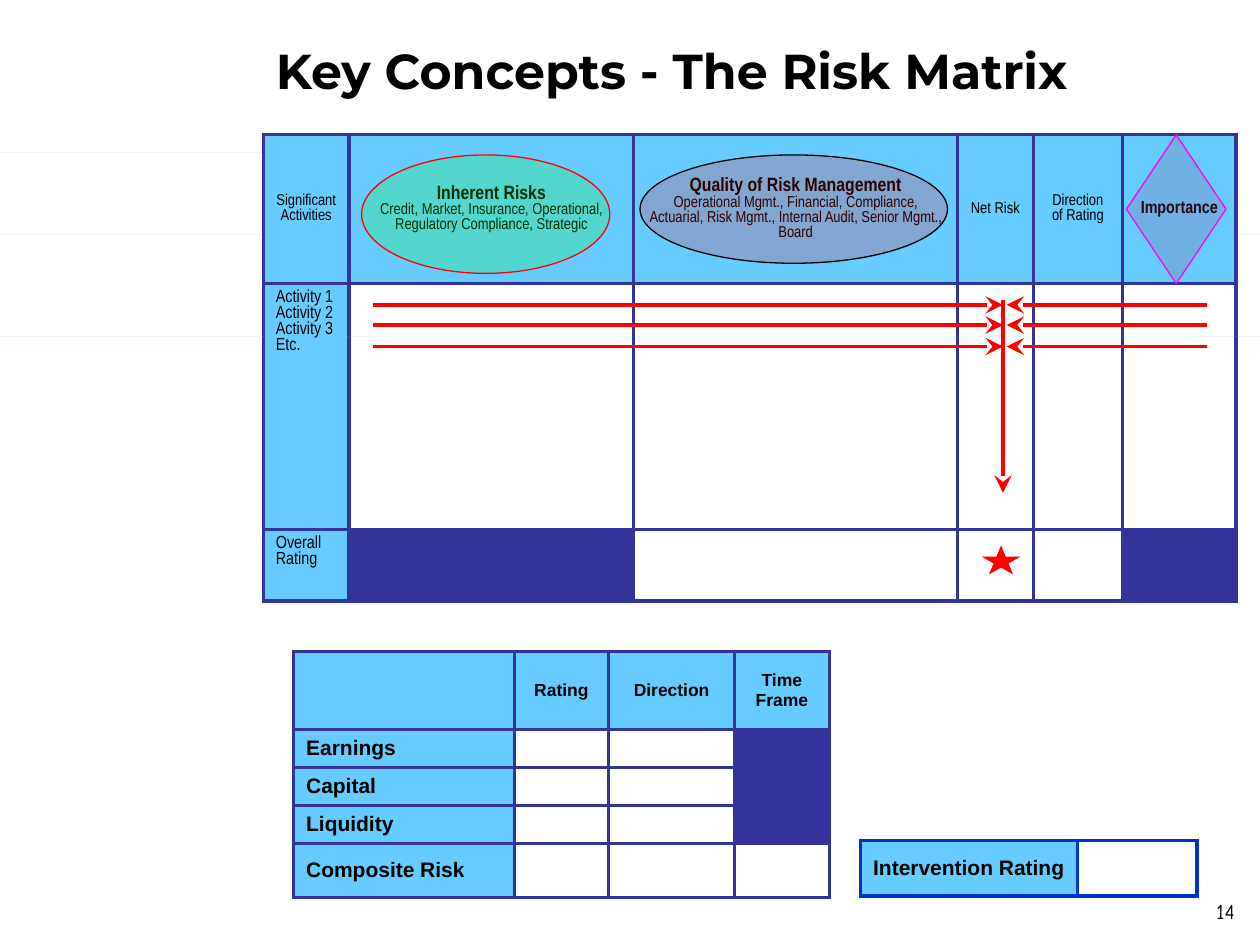
from dataclasses import dataclass

from lxml import etree
from pptx import Presentation
from pptx.dml.color import RGBColor
from pptx.enum.shapes import MSO_CONNECTOR, MSO_SHAPE
from pptx.enum.text import MSO_ANCHOR, PP_ALIGN
from pptx.oxml.ns import qn
from pptx.util import Inches, Pt

LEFT, CENTER, RIGHT = PP_ALIGN.LEFT, PP_ALIGN.CENTER, PP_ALIGN.RIGHT
TOP, MIDDLE, BOTTOM = MSO_ANCHOR.TOP, MSO_ANCHOR.MIDDLE, MSO_ANCHOR.BOTTOM
RECT, OVAL = MSO_SHAPE.RECTANGLE, MSO_SHAPE.OVAL
DIAMOND, STAR = MSO_SHAPE.DIAMOND, MSO_SHAPE.STAR_5_POINT
STRAIGHT = MSO_CONNECTOR.STRAIGHT


@dataclass(frozen=True)
class Theme:
    sky: str = "66CCFF"
    navy: str = "333399"
    blue: str = "0033CC"
    red: str = "FF0000"
    green: str = "00FF00"
    plum: str = "993366"
    pink: str = "FF00FF"
    black: str = "000000"
    head: str = "Montserrat"
    sans: str = "Arial"
    slim: str = "Arial Narrow"
    page: str = "Comic Neue"
    title: float = 28
    large: float = 12
    lead: float = 11
    mid: float = 10
    small: float = 9


T = Theme()


@dataclass(frozen=True)
class Line:
    text: str
    size: float
    bold: bool = False


@dataclass(frozen=True)
class Cell:
    lines: tuple[Line, ...] = ()
    fill: str = ""
    align: PP_ALIGN = LEFT
    anchor: MSO_ANCHOR = MIDDLE


@dataclass(frozen=True)
class Grid:
    left: float
    top: float
    cols: tuple[float, ...]
    rows: tuple[float, ...]
    cells: list[list[Cell]]
    edge: str
    width: float
    font: str


@dataclass(frozen=True)
class Mark:
    kind: MSO_SHAPE
    box: tuple[float, float, float, float]
    fill: str
    alpha: int = 100
    line: str = ""


def add_run(para, line: Line, font: str) -> None:
    run = para.add_run()
    run.text = line.text
    run.font.name = font
    run.font.size = Pt(line.size)
    run.font.bold = line.bold
    run.font.color.rgb = RGBColor.from_string(T.black)


def add_edges(cell, color: str, width: float) -> None:
    """Border all four sides; borders must precede the cell's fill."""
    props = cell._tc.get_or_add_tcPr()
    for i, tag in enumerate(("a:lnL", "a:lnR", "a:lnT", "a:lnB")):
        edge = etree.Element(qn(tag), w=str(Pt(width)))
        fill = etree.SubElement(edge, qn("a:solidFill"))
        etree.SubElement(fill, qn("a:srgbClr"), val=color)
        props.insert(i, edge)


def fill_cell(cell, item: Cell, grid: Grid) -> None:
    if item.fill:
        cell.fill.solid()
        cell.fill.fore_color.rgb = RGBColor.from_string(item.fill)
    else:
        cell.fill.background()
    add_edges(cell, grid.edge, grid.width)
    cell.vertical_anchor = item.anchor
    frame = cell.text_frame
    if not item.lines:
        end = etree.SubElement(frame.paragraphs[0]._p, qn("a:endParaRPr"))
        end.set("sz", str(int(T.small * 100)))
    for i, line in enumerate(item.lines):
        para = frame.add_paragraph() if i else frame.paragraphs[0]
        para.alignment = item.align
        add_run(para, line, grid.font)


def add_grid(slide, grid: Grid) -> None:
    table = slide.shapes.add_table(
        len(grid.rows), len(grid.cols), Inches(grid.left), Inches(grid.top),
        Inches(sum(grid.cols)), Inches(sum(grid.rows))).table
    table.first_row = table.horz_banding = False
    for col, width in zip(table.columns, grid.cols):
        col.width = Inches(width)
    for row, height, items in zip(table.rows, grid.rows, grid.cells):
        row.height = Inches(height)
        for cell, item in zip(row.cells, items):
            fill_cell(cell, item, grid)


def add_mark(slide, mark: Mark) -> None:
    shape = slide.shapes.add_shape(mark.kind, *map(Inches, mark.box))
    shape.shadow.inherit = False
    shape.fill.solid()
    shape.fill.fore_color.rgb = RGBColor.from_string(mark.fill)
    if mark.alpha < 100:
        color = shape._element.spPr.find(qn("a:solidFill"))[0]
        etree.SubElement(color, qn("a:alpha"), val=str(mark.alpha * 1000))
    if mark.line:
        shape.line.color.rgb = RGBColor.from_string(mark.line)
        shape.line.width = Pt(0.75)
    else:
        shape.line.fill.background()


def add_arrow(slide, x1: float, y1: float, x2: float, y2: float) -> None:
    arrow = slide.shapes.add_connector(
        STRAIGHT, Inches(x1), Inches(y1), Inches(x2), Inches(y2))
    arrow.line.color.rgb = RGBColor.from_string(T.red)
    arrow.line.width = Pt(2)
    props = arrow._element.spPr
    etree.SubElement(props.find(qn("a:ln")), qn("a:tailEnd"),
                     type="stealth", w="lg", len="lg")
    etree.SubElement(props, qn("a:effectLst"))


def add_title(slide) -> None:
    title = slide.shapes.title
    title.left, title.top = Inches(2.09), Inches(0.27)
    title.width, title.height = Inches(7.48), Inches(1.04)
    frame = title.text_frame
    frame.vertical_anchor = TOP
    frame.paragraphs[0].alignment = LEFT
    add_run(frame.paragraphs[0],
            Line("Key Concepts - The Risk Matrix", T.title, True), T.head)


def add_page(slide) -> None:
    box = slide.shapes.add_textbox(*map(Inches, (9.5, 7.03, 0.3, 0.3)))
    frame = box.text_frame
    frame.word_wrap = True
    frame.margin_left = frame.margin_right = 0
    frame.margin_top = frame.margin_bottom = 0
    frame.vertical_anchor = BOTTOM
    frame.paragraphs[0].alignment = RIGHT
    add_run(frame.paragraphs[0], Line("14", T.large), T.page)


def head(*lines: Line) -> Cell:
    return Cell(lines, T.sky, CENTER)


def label(text: str) -> Cell:
    return Cell((Line(text, T.large, True),), T.sky)


def side(*texts: str) -> Cell:
    return Cell(tuple(Line(t, T.mid) for t in texts), T.sky, anchor=TOP)


BLANK, DARK = Cell(), Cell(fill=T.navy)

MATRIX = Grid(2.09, 1.07, (0.68, 2.26, 2.57, 0.6, 0.71, 0.9), (1.18, 1.95, 0.57), [
    [head(Line("Significant Activities", T.small)),
     head(Line("Inherent Risks", T.lead, True),
          Line("Credit, Market, Insurance, Operational, "
               "Regulatory Compliance, Strategic", T.small)),
     head(Line("Quality of Risk Management", T.lead, True),
          Line("Operational Mgmt., Financial, Compliance, Actuarial, "
               "Risk Mgmt., Internal Audit, Senior Mgmt., Board", T.small)),
     head(Line("Net Risk", T.small)),
     head(Line("Direction of Rating", T.small)),
     head(Line("Importance", T.mid, True))],
    [side("Activity 1", "Activity 2", "Activity 3", "Etc."), *[BLANK] * 5],
    [side("Overall Rating"), DARK, *[BLANK] * 3, DARK],
], T.navy, 2, T.slim)

RATINGS = Grid(2.33, 5.17, (1.75, 0.75, 1, 0.75), (0.62, 0.3, 0.3, 0.3, 0.43), [
    [Cell(fill=T.sky), *(head(Line(t, T.mid, True))
                         for t in ("Rating", "Direction", "Time Frame"))],
    *([label(t), BLANK, BLANK, DARK] for t in ("Earnings", "Capital", "Liquidity")),
    [label("Composite Risk"), *[BLANK] * 3],
], T.navy, 2, T.sans)

ACTION = Grid(6.83, 6.67, (1.72, 0.95), (0.44,),
              [[label("Intervention Rating"), BLANK]], T.blue, 2.25, T.sans)


def main() -> None:
    deck = Presentation()
    deck.slide_width, deck.slide_height = Inches(10), Inches(7.5)
    slide = deck.slides.add_slide(deck.slide_layouts[5])
    add_page(slide)
    add_title(slide)
    add_mark(slide, Mark(RECT, (0, 1.21, 9.68, 0), T.sky))
    add_mark(slide, Mark(RECT, (0, 1.86, 10, 0), T.sky))
    add_grid(slide, MATRIX)
    for mark in (Mark(OVAL, (2.87, 1.23, 1.97, 0.94), T.green, 19, T.red),
                 Mark(DIAMOND, (8.94, 1.07, 0.79, 1.18), T.plum, 19, T.pink),
                 Mark(RECT, (0, 2.67, 10, 0), T.sky),
                 Mark(OVAL, (5.08, 1.23, 2.44, 0.86), T.red, 18, T.black),
                 Mark(STAR, (7.79, 4.33, 0.31, 0.23), T.red)):
        add_mark(slide, mark)
    add_grid(slide, RATINGS)
    add_grid(slide, ACTION)
    for y in (2.42, 2.58, 2.75):
        add_arrow(slide, 2.96, y, 7.96, y)
        add_arrow(slide, 9.58, y, 7.99, y)
    add_arrow(slide, 7.96, 2.38, 7.96, 3.91)
    deck.save("out.pptx")


if __name__ == "__main__":
    main()
